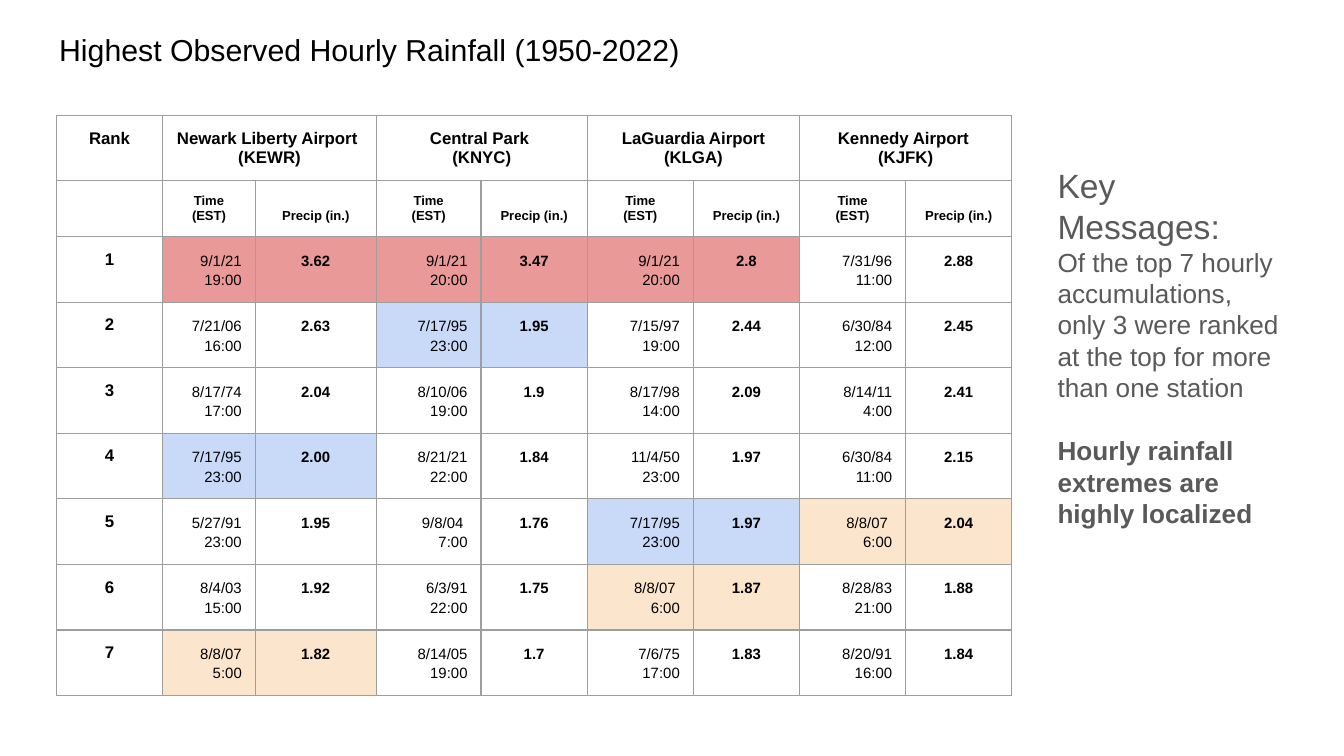
import lxml.etree
import pptx
import pptx.dml.color
import pptx.enum.text
import pptx.oxml.ns
import pptx.util

ALIGN = pptx.enum.text.PP_ALIGN
ANCHOR = pptx.enum.text.MSO_ANCHOR
INCH = pptx.util.Inches

SLIDE_WIDTH = 10
SLIDE_HEIGHT = SLIDE_WIDTH * 9 / 16

TITLE = "Highest Observed Hourly Rainfall (1950-2022)"
STATIONS = [
    "Newark Liberty Airport \n(KEWR)",
    "Central Park \n(KNYC)",
    "LaGuardia Airport (KLGA)",
    "Kennedy Airport \n(KJFK)",
]
MEASURES = ["Time\n(EST)", "Precip (in.)"]
# One row per rank: time and precipitation for each station in turn.
RECORDS = [
    ["9/1/21 19:00", "3.62", "9/1/21 20:00", "3.47", "9/1/21 20:00", "2.8", "7/31/96 11:00", "2.88"],
    ["7/21/06 16:00", "2.63", "7/17/95 23:00", "1.95", "7/15/97 19:00", "2.44", "6/30/84 12:00", "2.45"],
    ["8/17/74 17:00", "2.04", "8/10/06 19:00", "1.9", "8/17/98 14:00", "2.09", "8/14/11 4:00", "2.41"],
    ["7/17/95 23:00", "2.00", "8/21/21 22:00", "1.84", "11/4/50 23:00", "1.97", "6/30/84 11:00", "2.15"],
    ["5/27/91 23:00", "1.95", "9/8/04 \n7:00", "1.76", "7/17/95 23:00", "1.97", "8/8/07 \n6:00", "2.04"],
    ["8/4/03 15:00", "1.92", "6/3/91 22:00", "1.75", "8/8/07 \n6:00", "1.87", "8/28/83 21:00", "1.88"],
    ["8/8/07 5:00", "1.82", "8/14/05 19:00", "1.7", "7/6/75 17:00", "1.83", "8/20/91 16:00", "1.84"],
]
# Storms that rank at more than one station share a colour.
STORM_FILLS = {"9/1/21": "EA9999", "7/17/95": "C9DAF8", "8/8/07": "FCE5CD"}
# Text, size, bold, space before
MESSAGES = [
    ("Key Messages:", 18, False, 0),
    ("Of the top 7 hourly accumulations, only 3 were ranked at the top for more than one station", 14, False, 0),
    ("Hourly rainfall extremes are highly localized", 14, True, 17),
]
COLUMN_WIDTHS = [0.79, 0.69, 0.9, 0.78] + [0.79] * 5
ROW_HEIGHT = 0.42


def color(value):
    return pptx.dml.color.RGBColor.from_string(value)


def style_font(font, size, bold=False, fill="000000"):
    font.name = "Arial"
    font.size = pptx.util.Pt(size)
    font.bold = bold
    font.color.rgb = color(fill)


def set_margins(frame):
    for side in ("left", "top", "right", "bottom"):
        setattr(frame, "margin_" + side, INCH(0.1))


def draw_borders(cell):
    properties = cell._tc.get_or_add_tcPr()
    for index, side in enumerate(("lnL", "lnR", "lnT", "lnB")):
        line = lxml.etree.Element(pptx.oxml.ns.qn("a:" + side), w="9525")
        fill = lxml.etree.SubElement(line, pptx.oxml.ns.qn("a:solidFill"))
        lxml.etree.SubElement(fill, pptx.oxml.ns.qn("a:srgbClr"), val="9E9E9E")
        properties.insert(index, line)


def write_cell(cell, text, size, bold=True, align=ALIGN.CENTER,
               spacing=None, anchor=ANCHOR.TOP, fill=None):
    cell.text = text
    set_margins(cell)
    cell.vertical_anchor = anchor
    for para in cell.text_frame.paragraphs:
        para.alignment = align
        para.line_spacing = spacing
        for span in para.runs:
            style_font(span.font, size, bold)
        if not para.runs:
            end = lxml.etree.SubElement(para._p, pptx.oxml.ns.qn("a:endParaRPr"))
            end.set("sz", str(size * 100))
    if fill:
        cell.fill.solid()
        cell.fill.fore_color.rgb = color(fill)
    else:
        cell.fill.background()
    draw_borders(cell)


def add_title(slide):
    title = slide.shapes.title
    title.left, title.top, title.width, title.height = map(INCH, (0.34, 0.13, 9.32, 0.63))
    frame = title.text_frame
    frame.text = TITLE
    frame.word_wrap = True
    frame.vertical_anchor = ANCHOR.TOP
    set_margins(frame)
    para = frame.paragraphs[0]
    para.alignment = ALIGN.LEFT
    para.line_spacing = 1.0
    style_font(para.runs[0].font, 16.2)


def add_rainfall_table(slide):
    row_count = len(RECORDS) + 2
    frame = slide.shapes.add_table(row_count, len(COLUMN_WIDTHS),
                                   *map(INCH, (0.42, 0.86, 7.12, ROW_HEIGHT * row_count)))
    table = frame.table
    table.first_row = table.horz_banding = False
    for column, width in zip(table.columns, COLUMN_WIDTHS):
        column.width = INCH(width)
    for row in table.rows:
        row.height = INCH(ROW_HEIGHT)

    write_cell(table.cell(0, 0), "Rank", 9)
    write_cell(table.cell(1, 0), "", 7)
    for index, station in enumerate(STATIONS):
        first = 1 + 2 * index
        table.cell(0, first).merge(table.cell(0, first + 1))
        write_cell(table.cell(0, first), station, 9)
        draw_borders(table.cell(0, first + 1))
        for offset, measure in enumerate(MEASURES):
            write_cell(table.cell(1, first + offset), measure, 7, anchor=ANCHOR.BOTTOM)

    for rank, record in enumerate(RECORDS, start=1):
        row = rank + 1
        write_cell(table.cell(row, 0), str(rank), 9)
        for column in range(1, len(record), 2):
            time, precipitation = record[column - 1:column + 1]
            fill = STORM_FILLS.get(time.split()[0])
            write_cell(table.cell(row, column), time, 8, False, ALIGN.RIGHT, 1.15, fill=fill)
            write_cell(table.cell(row, column + 1), precipitation, 8, spacing=1.15, fill=fill)


def add_messages(slide):
    box = slide.shapes.add_textbox(*map(INCH, (7.77, 1.13, 1.89, 3.58)))
    frame = box.text_frame
    frame.word_wrap = True
    set_margins(frame)
    frame.text = "\n".join(message[0] for message in MESSAGES)
    for para, (_, size, bold, space) in zip(frame.paragraphs, MESSAGES):
        para.line_spacing = 1.0
        para.space_before = pptx.util.Pt(space)
        style_font(para.runs[0].font, size, bold, "595959")


def main():
    deck = pptx.Presentation()
    deck.slide_width, deck.slide_height = INCH(SLIDE_WIDTH), INCH(SLIDE_HEIGHT)
    slide = deck.slides.add_slide(deck.slide_layouts[5])
    add_title(slide)
    add_rainfall_table(slide)
    add_messages(slide)
    deck.save("out.pptx")


if __name__ == "__main__":
    main()
